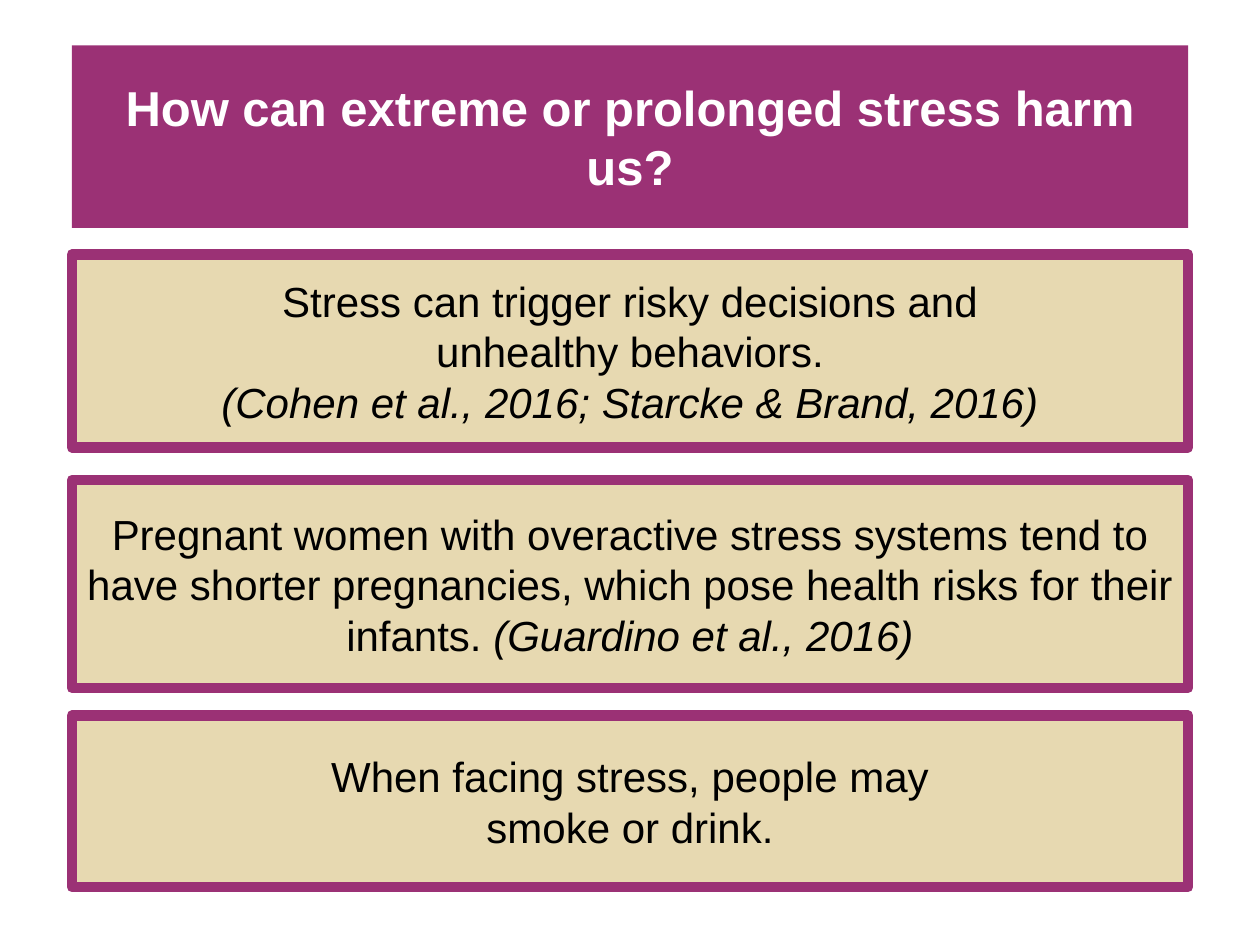
"""Build a slide on how extreme or prolonged stress harms us."""
from dataclasses import dataclass

from lxml.etree import SubElement
from pptx import Presentation
from pptx.dml.color import RGBColor
from pptx.enum.text import MSO_ANCHOR, MSO_AUTO_SIZE, PP_ALIGN
from pptx.oxml.ns import qn
from pptx.util import Inches, Pt


@dataclass(frozen=True)
class Theme:
    plum: RGBColor = RGBColor.from_string("9B3175")
    sand: RGBColor = RGBColor.from_string("E7D9B1")
    white: RGBColor = RGBColor.from_string("FFFFFF")
    black: RGBColor = RGBColor.from_string("000000")
    font: str = "Arial"
    title_size: Pt = Pt(28)
    body_size: Pt = Pt(24)
    border: Pt = Pt(6)


THEME = Theme()
WIDTH, HEIGHT = 10, 7.5
MARGIN = 0.57
COMPARISON_LAYOUT = 4

TITLE = [[("How can extreme or prolonged stress harm us?", False)]]
HARMS = [
    [
        [("Stress can trigger risky decisions and", False)],
        [("unhealthy behaviors.", False)],
        [("(Cohen et al., 2016; Starcke & Brand, 2016)", True)],
    ],
    [
        [
            ("Pregnant women with overactive stress systems tend to have shorter "
             "pregnancies, which pose health risks for their infants. ", False),
            ("(Guardino et al., 2016)", True),
        ],
    ],
    [
        [("When facing stress, people may", False)],
        [("smoke or drink.", False)],
    ],
]
ROWS = [(0.36, 1.45), (2.02, 1.53), (3.81, 1.65), (5.68, 1.36)]

TITLE_FONT = {"name": THEME.font, "size": THEME.title_size, "bold": True}
BODY_FONT = {"name": THEME.font, "size": THEME.body_size, "bold": False}
FRAME_FORMAT = {
    "word_wrap": True,
    "auto_size": MSO_AUTO_SIZE.NONE,
    "vertical_anchor": MSO_ANCHOR.MIDDLE,
}
PARAGRAPH_FORMAT = {
    "alignment": PP_ALIGN.CENTER,
    "space_before": Pt(0),
    "space_after": Pt(0),
    "line_spacing": 1.0,
}


def set_attributes(target, values):
    for name, value in values.items():
        setattr(target, name, value)


def write_text(shape, paragraphs, font_format, color):
    frame = shape.text_frame
    set_attributes(frame, FRAME_FORMAT)
    for index, runs in enumerate(paragraphs):
        paragraph = frame.add_paragraph() if index else frame.paragraphs[0]
        set_attributes(paragraph, PARAGRAPH_FORMAT)
        properties = paragraph._p.get_or_add_pPr()
        properties.set("marL", "0")
        properties.set("indent", "0")
        SubElement(properties, qn("a:buNone"))
        for text, italic in runs:
            run = paragraph.add_run()
            run.text = text
            set_attributes(run.font, {**font_format, "italic": italic})
            run.font.color.rgb = color


def place_panel(shape, row, fill):
    top, height = row
    set_attributes(shape, {
        "left": Inches(MARGIN),
        "top": Inches(top),
        "width": Inches(WIDTH - 2 * MARGIN),
        "height": Inches(height),
    })
    shape.fill.solid()
    shape.fill.fore_color.rgb = fill


def main():
    presentation = Presentation()
    presentation.slide_width = Inches(WIDTH)
    presentation.slide_height = Inches(HEIGHT)
    layout = presentation.slide_layouts[COMPARISON_LAYOUT]
    slide = presentation.slides.add_slide(layout)
    title, *panels = list(slide.placeholders)

    place_panel(title, ROWS[0], THEME.plum)
    write_text(title, TITLE, TITLE_FONT, THEME.white)

    for panel, row, harm in zip(panels, ROWS[1:], HARMS):
        place_panel(panel, row, THEME.sand)
        panel.line.color.rgb = THEME.plum
        panel.line.width = THEME.border
        write_text(panel, harm, BODY_FONT, THEME.black)

    for spare in panels[len(HARMS):]:
        spare.element.getparent().remove(spare.element)

    presentation.save("out.pptx")


if __name__ == "__main__":
    main()
